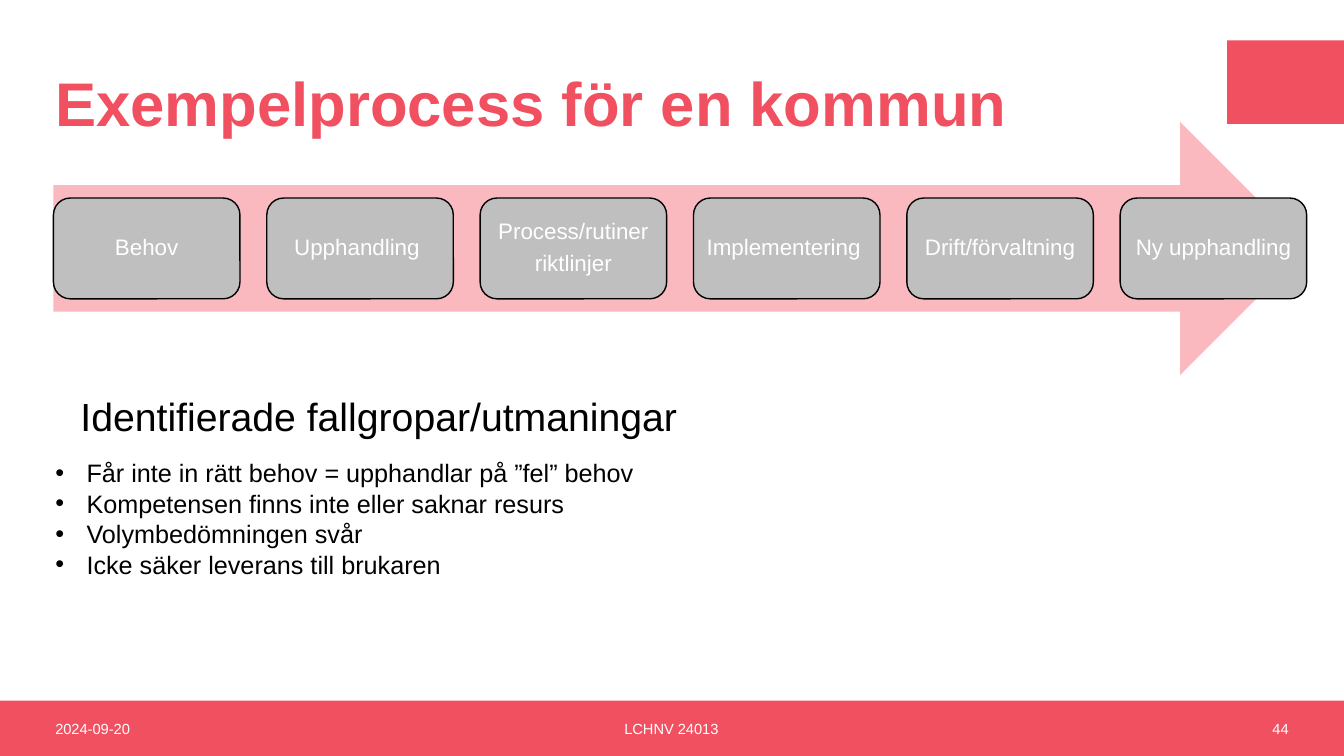
from lxml.etree import SubElement
from pptx import Presentation
from pptx.dml.color import RGBColor
from pptx.enum.shapes import MSO_SHAPE as Shape
from pptx.enum.text import MSO_ANCHOR as Anchor, PP_ALIGN as Align
from pptx.oxml.ns import qn
from pptx.util import Inches, Pt

RED = RGBColor(0xF1, 0x50, 0x60)
PINK = RGBColor(0xF9, 0xB9, 0xBF)
GRAY = RGBColor(0xBF, 0xBF, 0xBF)
BLACK = RGBColor(0, 0, 0)
WHITE = RGBColor(255, 255, 255)
FONT = "Arial"
PAGE_WIDTH, PAGE_HEIGHT = 13.33, 7.5

STEPS = [
    ["Behov"],
    ["Upphandling "],
    ["Process/rutiner", "riktlinjer"],
    ["Implementering "],
    ["Drift/förvaltning"],
    ["Ny upphandling"],
]
PITFALLS = [
    "Får inte in rätt behov = upphandlar på ”fel” behov",
    "Kompetensen finns inte eller saknar resurs",
    "Volymbedömningen svår",
    "Icke säker leverans till brukaren",
]


def add_block(page, kind, left, top, width, height, fill, line=None):
    block = page.shapes.add_shape(
        kind, Inches(left), Inches(top), Inches(width), Inches(height))
    block.shadow.inherit = False
    block.fill.solid()
    block.fill.fore_color.rgb = fill
    if line is None:
        block.line.fill.background()
    else:
        block.line.color.rgb = line
        block.line.width = Pt(1)
    return block


def write(box, lines, size, color, align=Align.LEFT, anchor=Anchor.TOP, bold=False):
    """Fill a shape with one paragraph per line and return the paragraphs."""
    frame = box.text_frame
    frame.word_wrap = True
    frame.vertical_anchor = anchor
    for index, text in enumerate(lines):
        para = frame.add_paragraph() if index else frame.paragraphs[0]
        para.alignment = align
        span = para.add_run()
        span.text = text
        span.font.name = FONT
        span.font.size = Pt(size)
        span.font.bold = bold
        span.font.color.rgb = color
    return frame.paragraphs


def add_text(page, left, top, width, height, lines, size, color, **style):
    box = page.shapes.add_textbox(
        Inches(left), Inches(top), Inches(width), Inches(height))
    return write(box, lines, size, color, **style)


def add_bullet(para, indent):
    props = para._p.get_or_add_pPr()
    props.set("marL", str(Inches(indent)))
    props.set("indent", str(-Inches(indent)))
    SubElement(props, qn("a:buFont"), typeface=FONT)
    SubElement(props, qn("a:buChar"), char="•")


def add_header(page, left, top, width, height):
    add_block(page, Shape.RECTANGLE, PAGE_WIDTH - 1.16, top, 1.16, 0.83, RED)
    title, = add_text(page, left, top, width, height, ["Exempelprocess för en kommun"],
                      44, RED, anchor=Anchor.MIDDLE, bold=True)
    title.line_spacing = 0.9


def add_process(page, left, top, width, height):
    """Arrow with evenly spaced step boxes across its middle."""
    add_block(page, Shape.RIGHT_ARROW, left, top, width, height, PINK)
    step_width, step_height = 1.85, 1.0
    pitch = (width - step_width) / (len(STEPS) - 1)
    step_top = top + (height - step_height) / 2
    for index, lines in enumerate(STEPS):
        step = add_block(page, Shape.ROUNDED_RECTANGLE, left + index * pitch, step_top,
                         step_width, step_height, GRAY, BLACK)
        frame = step.text_frame
        frame.margin_left = frame.margin_right = Inches(0.07)
        frame.margin_top = frame.margin_bottom = Inches(0.07)
        for para in write(step, lines, 16, WHITE, Align.CENTER, Anchor.MIDDLE):
            para.line_spacing = 0.9
            para.space_after = Pt(6)


def add_pitfalls(page, left, top, width, height):
    add_text(page, left + 0.25, top, width - 0.16, 0.57,
             ["Identifierade fallgropar/utmaningar"], 28, BLACK)
    list_offset = 0.65
    for para in add_text(page, left, top + list_offset, width, height - list_offset,
                         PITFALLS, 18, BLACK):
        para.line_spacing = Pt(21.7)
        add_bullet(para, 0.31)


def add_footer(page, top, height):
    add_block(page, Shape.RECTANGLE, 0, top, PAGE_WIDTH, height, RED)
    for left, width, text, align in [
        (0.45, 3, "2024-09-20", Align.LEFT),
        (3.91, 5.5, "LCHNV 24013", Align.CENTER),
        (9.88, 3, "44", Align.RIGHT),
    ]:
        add_text(page, left, top, width, height, [text], 10.5, WHITE,
                 align=align, anchor=Anchor.MIDDLE)


def main():
    deck = Presentation()
    deck.slide_width = Inches(PAGE_WIDTH)
    deck.slide_height = Inches(PAGE_HEIGHT)
    page = deck.slides.add_slide(deck.slide_layouts[6])
    add_footer(page, 6.95, 0.55)
    add_header(page, 0.45, 0.4, 11.61, 1.32)
    add_process(page, 0.53, 1.21, 12.43, 2.51)
    add_pitfalls(page, 0.45, 3.84, 7.19, 2.58)
    deck.save("out.pptx")


if __name__ == "__main__":
    main()
